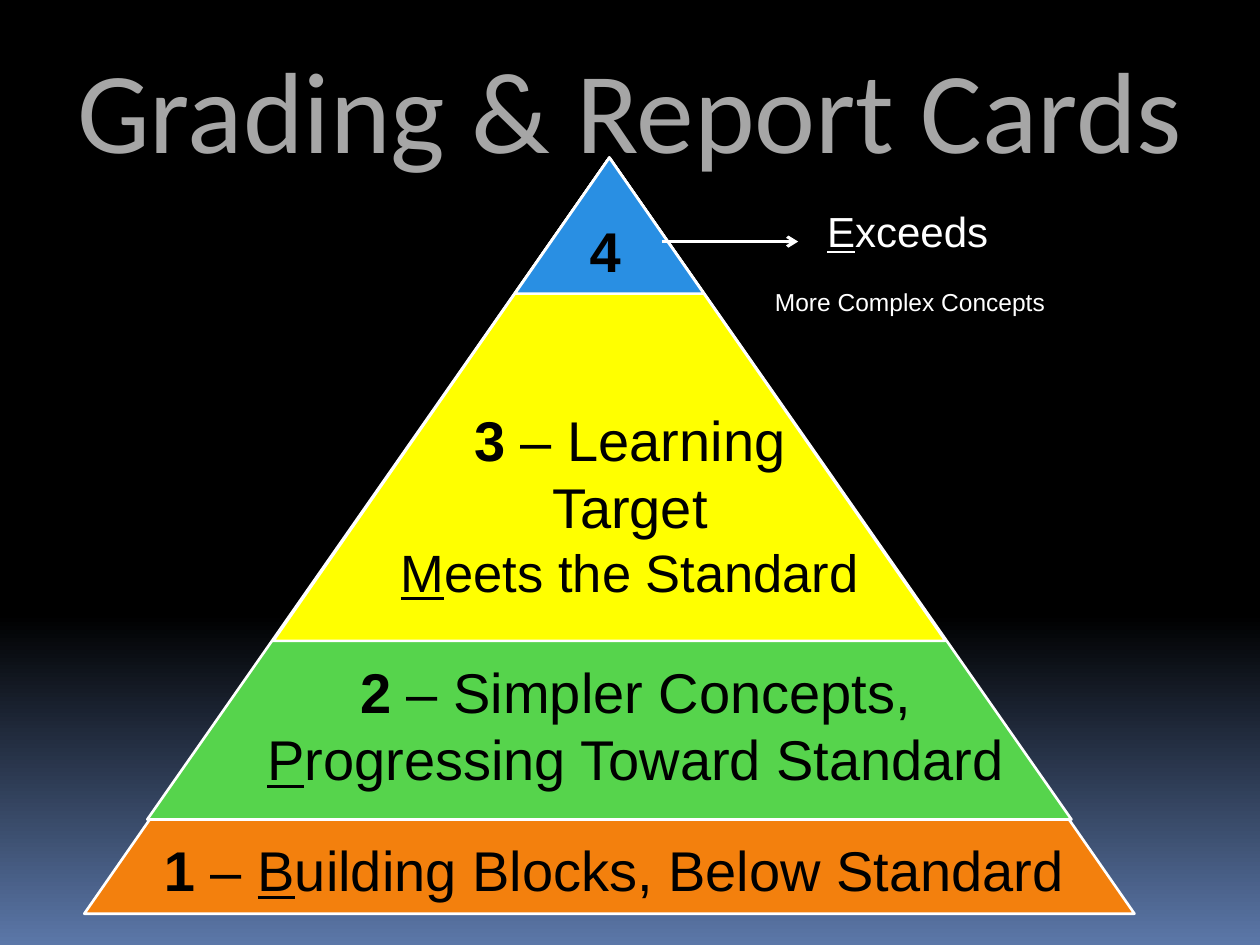
from copy import deepcopy

from lxml import etree
from pptx import Presentation
from pptx import util as u
from pptx.dml.color import RGBColor
from pptx.enum import shapes, text
from pptx.oxml.ns import qn

BLACK = RGBColor(0x00, 0x00, 0x00)
WHITE = RGBColor(0xFF, 0xFF, 0xFF)
GREY = RGBColor(0xA6, 0xA6, 0xA6)
DUSK = RGBColor(0x5B, 0x77, 0xA8)
ORANGE = RGBColor(0xF3, 0x80, 0x0D)
GREEN = RGBColor(0x56, 0xD4, 0x4C)
YELLOW = RGBColor(0xFF, 0xFF, 0x00)
BLUE = RGBColor(0x29, 0x8F, 0xE3)

BOLD = {"bold": True}
UNDERLINED = {"underline": True}

# Pyramid levels from back to front: width, height (cm), colour
LEVELS = [
    (21.17, 15.24, ORANGE),
    (18.63, 13.34, GREEN),
    (13.55, 9.74, YELLOW),
    (3.81, 2.74, BLUE),
]

# Level captions: offset from the pyramid box, size (cm), wrap,
# paragraphs as (size, runs), runs as (words, format)
CAPTIONS = [
    ((5.92, 4.87, 10.16, 4.27), True, [
        (32, [("3", BOLD), (" – Learning Target", {})]),
        (30, [("M", UNDERLINED), ("eets the Standard", {})]),
    ]),
    ((3.18, 9.95, 15.88, 3.0), True, [
        (32, [("2", BOLD), (" – Simpler Concepts, ", {}),
              ("P", UNDERLINED), ("rogressing Toward Standard", {})]),
    ]),
    ((0.84, 13.54, 19.69, 1.63), True, [
        (32, [("1", BOLD), (" – ", {}), ("B", UNDERLINED),
              ("uilding Blocks, Below Standard", {})]),
    ]),
    ((9.93, 1.06, 1.14, 1.63), False, [(32, [("4", BOLD)])]),
]


def add_text(slide, box, paragraphs, colour, name="Arial", wrap=True, space_after=0):
    """Place centred paragraphs of formatted runs in a box given in cm."""
    frame = slide.shapes.add_textbox(*map(u.Cm, box)).text_frame
    frame.word_wrap = wrap
    frame.auto_size = text.MSO_AUTO_SIZE.SHAPE_TO_FIT_TEXT
    for index, (size, runs) in enumerate(paragraphs):
        paragraph = frame.paragraphs[0] if index == 0 else frame.add_paragraph()
        paragraph.alignment = text.PP_ALIGN.CENTER
        paragraph.space_after = u.Pt(space_after)
        for words, extra in runs:
            run = paragraph.add_run()
            run.text = words
            run.font.color.rgb = colour
            for key, value in {"name": name, "size": u.Pt(size), **extra}.items():
                setattr(run.font, key, value)


def paint_background(slide):
    """Black that fades to blue below 65 % of the height."""
    fill = slide.background.fill
    fill.gradient()
    fill.gradient_angle = 270
    stop_list = slide.element.find(".//" + qn("a:gsLst"))
    stop_list.insert(1, deepcopy(stop_list[0]))
    colours = [(0, BLACK), (0.65, BLACK), (1, DUSK)]
    for stop, (position, colour) in zip(fill.gradient_stops, colours):
        stop.position = position
        stop.color.rgb = colour


def build_title(slide, box):
    add_text(slide, box, [(66, [("Grading & Report Cards", {})])], GREY, "Calibri")


def build_pyramid(slide, left, top, width):
    """Nested triangles that share one apex."""
    group = slide.shapes.add_group_shape()
    for level_width, height, colour in LEVELS:
        triangle = group.shapes.add_shape(
            shapes.MSO_SHAPE.ISOSCELES_TRIANGLE,
            u.Cm(left + (width - level_width) / 2), u.Cm(top),
            u.Cm(level_width), u.Cm(height))
        triangle.shadow.inherit = False
        triangle.fill.solid()
        triangle.fill.fore_color.rgb = colour
        triangle.line.color.rgb = WHITE
        triangle.line.width = u.Pt(1.5)


def build_captions(slide, left, top):
    for (x, y, width, height), wrap, paragraphs in CAPTIONS:
        add_text(slide, (left + x, top + y, width, height), paragraphs, BLACK, wrap=wrap)


def build_callout(slide, left, top, width, height):
    """Text beside the top level."""
    paragraphs = [
        (24, [("E", UNDERLINED), ("xceeds ", {})]),
        (14, [("More Complex Concepts ", {})]),
    ]
    add_text(slide, (left, top, width, height), paragraphs, WHITE, space_after=18)


def build_arrow(slide, left, top, length):
    arrow = slide.shapes.add_connector(
        shapes.MSO_CONNECTOR.STRAIGHT,
        u.Cm(left), u.Cm(top), u.Cm(left + length), u.Cm(top))
    arrow.line.color.rgb = WHITE
    arrow.line.width = u.Pt(1.75)
    properties = arrow.element.spPr
    etree.SubElement(properties.find(qn("a:ln")), qn("a:tailEnd"), type="arrow")
    etree.SubElement(properties, qn("a:effectLst"))


def main():
    presentation = Presentation()
    presentation.slide_width, presentation.slide_height = u.Cm(25.4), u.Cm(19.05)
    slide = presentation.slides.add_slide(presentation.slide_layouts[6])
    paint_background(slide)
    build_title(slide, (0, 0.64, 25.4, 3.07))
    build_pyramid(slide, 1.7, 3.18, 21.17)
    build_callout(slide, 13.97, 4.02, 8.89, 2.51)
    build_captions(slide, 1.7, 3.18)
    build_arrow(slide, 13.34, 4.87, 2.75)
    presentation.save("out.pptx")


if __name__ == "__main__":
    main()
